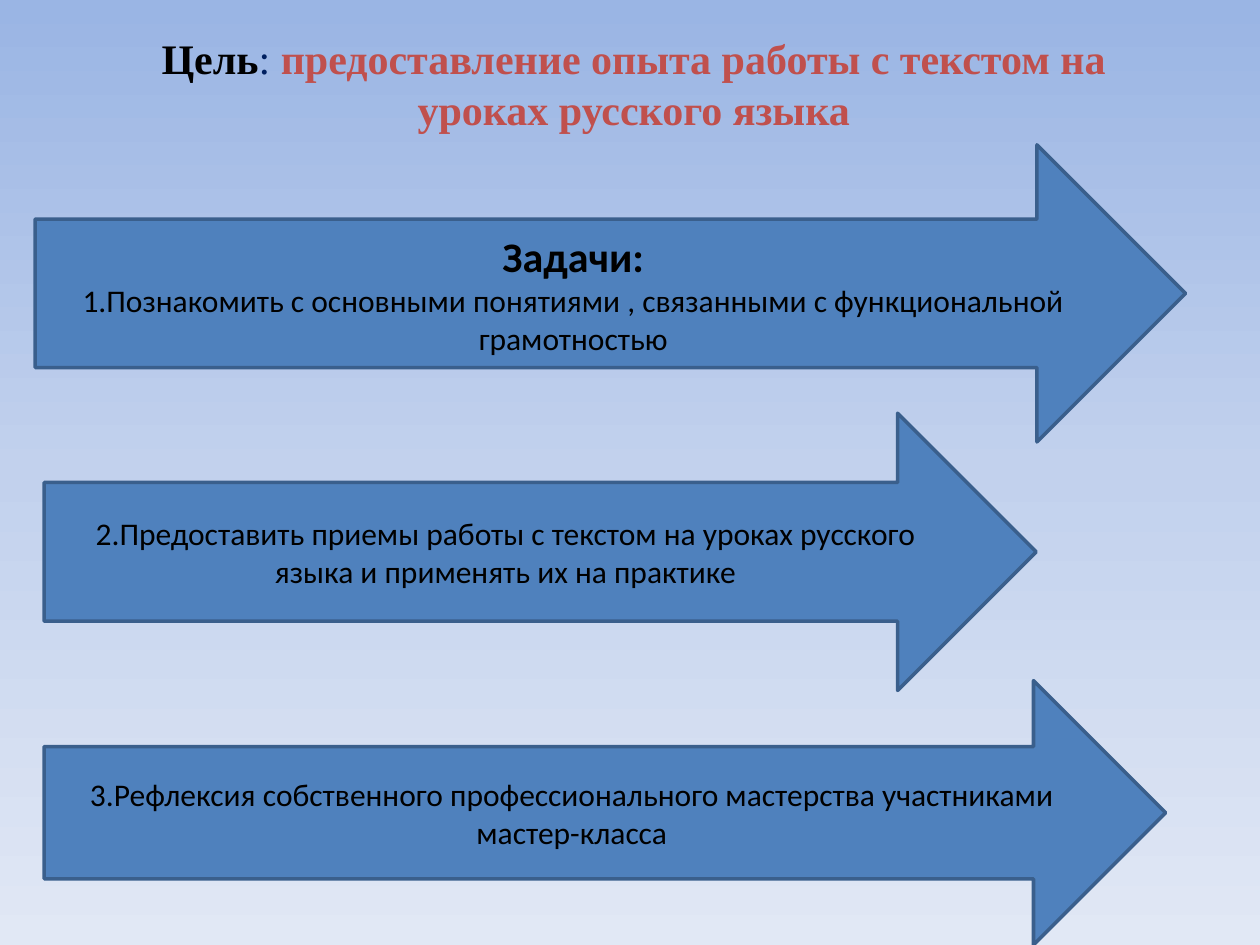
from copy import deepcopy

from pptx import Presentation
from pptx.dml.color import RGBColor
from pptx.enum.shapes import MSO_SHAPE
from pptx.enum.text import MSO_ANCHOR, PP_ALIGN
from pptx.util import Cm, Pt

ARROW = MSO_SHAPE.RIGHT_ARROW
TOP, MIDDLE = MSO_ANCHOR.TOP, MSO_ANCHOR.MIDDLE
CENTER = PP_ALIGN.CENTER


def color(code):
    return RGBColor.from_string(code)


class Deck:
    head_font, body_font = "Times New Roman", "Calibri"
    ink, fill, edge = "000000", "4F81BD", "3A5F8C"

    def __init__(self, wide, high):
        self.prs = Presentation()
        self.prs.slide_width, self.prs.slide_height = Cm(wide), Cm(high)

    def add_slide(self):
        self.slide = self.prs.slides.add_slide(self.prs.slide_layouts[5])

    def backdrop(self, codes):
        """Spread the colours evenly from top to bottom."""
        fill = self.slide.background.fill
        fill.gradient()
        fill.gradient_angle = 270
        stops = self.slide.element.xpath(".//a:gsLst")[0]
        while len(stops) < len(codes):
            stops.append(deepcopy(stops[-1]))
        for i, (stop, code) in enumerate(zip(fill.gradient_stops, codes)):
            stop.position = i / (len(codes) - 1)
            stop.color.rgb = color(code)

    def style(self, run, size, face, code, bold):
        font = run.font
        font.size, font.name, font.bold = Pt(size), face, bold
        font.color.rgb = color(code)

    def title(self, box, parts):
        shape = self.slide.shapes.title
        shape.left, shape.top, shape.width, shape.height = map(Cm, box)
        frame = shape.text_frame
        frame.word_wrap, frame.vertical_anchor = True, TOP
        para = frame.paragraphs[0]
        para.alignment = CENTER
        for text, code, bold in parts:
            run = para.add_run()
            run.text = text
            self.style(run, 24, self.head_font, code, bold)

    def arrow(self, box, lines):
        shape = self.slide.shapes.add_shape(ARROW, *map(Cm, box))
        shape.shadow.inherit = False
        shape.fill.solid()
        shape.fill.fore_color.rgb = color(self.fill)
        shape.line.color.rgb = color(self.edge)
        shape.line.width = Pt(2)
        frame = shape.text_frame
        frame.text = "\n".join(text for text, _, _ in lines)
        frame.word_wrap, frame.vertical_anchor = True, MIDDLE
        for para, (_, size, bold) in zip(frame.paragraphs, lines):
            para.alignment = CENTER
            self.style(para.runs[0], size, self.body_font, self.ink, bold)


def main():
    deck = Deck(25.4, 19.05)
    deck.add_slide()
    deck.backdrop(["9AB5E4", "C2D1ED", "E1E8F5"])

    # Goal
    deck.title((1.7, 0.53, 22.15, 2.31), [
        ("Цель", "000000", True),
        (": ", "002060", False),
        ("предоставление опыта работы с текстом на уроках русского языка",
         "C0504D", True),
    ])

    # Tasks
    deck.arrow((0.71, 2.92, 23.19, 5.99), [
        ("Задачи:", 24, True),
        ("1.Познакомить с основными понятиями , связанными с "
         "функциональной грамотностью", 18, False),
    ])
    deck.arrow((0.89, 8.33, 20, 5.59), [
        ("2.Предоставить приемы работы с текстом на уроках русского "
         "языка и применять их на практике", 18, False),
    ])
    deck.arrow((0.89, 13.72, 22.61, 5.33), [
        ("3.Рефлексия собственного профессионального мастерства "
         "участниками мастер-класса", 18, False),
    ])

    deck.prs.save("out.pptx")


if __name__ == "__main__":
    main()
